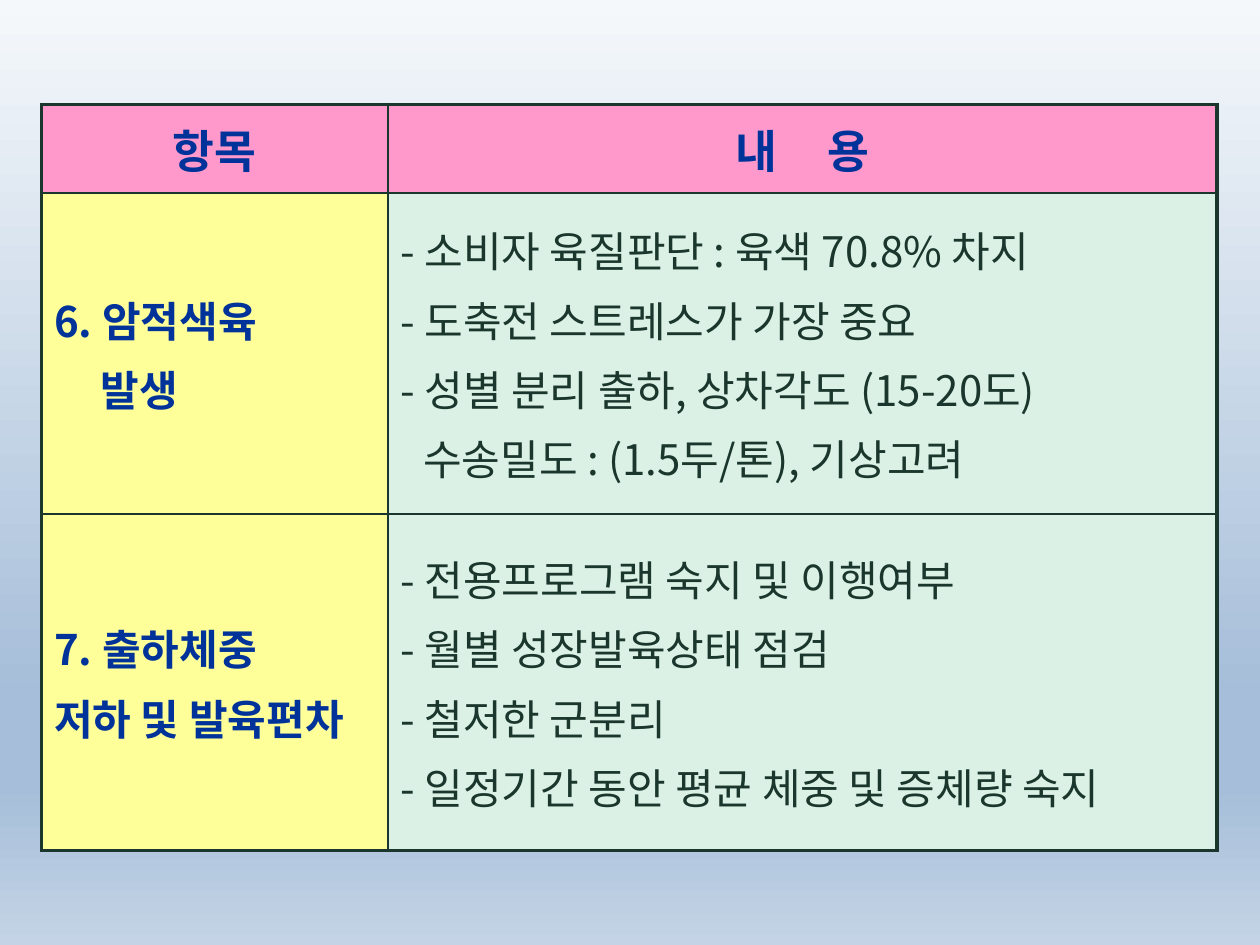
from copy import deepcopy

from pptx import Presentation
from pptx.dml.color import RGBColor
from pptx.enum.text import MSO_ANCHOR as Anchor, PP_ALIGN as Align
from pptx.oxml import parse_xml
from pptx.oxml.ns import nsdecls, qn
from pptx.util import Inches, Pt


def color(value):
    return RGBColor.from_string(value)


class SlideBuilder:
    FONT = "Noto Sans CJK KR"
    NAVY = "003399"
    GREEN = "1B372D"
    THICK = 2.25
    THIN = 1

    def __init__(self, slide):
        self.slide = slide

    def background(self, stops):
        fill = self.slide.background.fill
        fill.gradient()
        fill.gradient_angle = 270
        stop_list = self.slide.element.find(".//" + qn("a:gsLst"))
        for _ in range(len(stops) - len(stop_list)):
            stop_list.append(deepcopy(stop_list[0]))
        for stop, (position, shade) in zip(fill.gradient_stops, stops):
            stop.position = position
            stop.color.rgb = color(shade)

    def table(self, left, top, widths, heights):
        frame = self.slide.shapes.add_table(
            len(heights), len(widths), Inches(left), Inches(top),
            Inches(sum(widths)), Inches(sum(heights)))
        table = frame.table
        table.first_row = table.horz_banding = False
        for column, width in zip(table.columns, widths):
            column.width = Inches(width)
        for row, height in zip(table.rows, heights):
            row.height = Inches(height)
        return table

    def borders(self, cell, weights):
        properties = cell._tc.get_or_add_tcPr()
        for index, (side, weight) in enumerate(zip("LRTB", weights)):
            properties.insert(index, parse_xml(
                f'<a:ln{side} {nsdecls("a")} w="{Pt(weight)}"><a:solidFill>'
                f'<a:srgbClr val="{self.GREEN}"/></a:solidFill></a:ln{side}>'))

    def cell(self, cell, lines, fill, size, ink, bold, align=Align.LEFT):
        cell.fill.solid()
        cell.fill.fore_color.rgb = color(fill)
        cell.vertical_anchor = Anchor.MIDDLE
        cell.text_frame.text = "\n".join(lines)
        for index, paragraph in enumerate(cell.text_frame.paragraphs):
            paragraph.alignment = align
            if index:
                paragraph.space_before = Pt(size * 0.2)
            for run in paragraph.runs:
                self.format(run, size, ink, bold)

    def format(self, run, size, ink, bold):
        font = run.font
        font.name = self.FONT
        font.size = Pt(size)
        font.bold = bold
        font.color.rgb = color(ink)
        run._r.get_or_add_rPr().find(qn("a:latin")).addnext(
            parse_xml(f'<a:ea {nsdecls("a")} typeface="{self.FONT}"/>'))

    def indent(self, paragraph, inches):
        properties = paragraph._p.get_or_add_pPr()
        properties.set("marL", str(Inches(inches)))
        properties.set("indent", "0")

    def spread(self, paragraph, parts, size, ink, gap):
        paragraph.runs[0].text = parts[0]
        for part in parts[1:]:
            for text in (" ", part):
                run = paragraph.add_run()
                run.text = text
                self.format(run, size, ink, True)
                if text == " ":
                    run._r.get_or_add_rPr().set("spc", str(gap * 100))


def main():
    presentation = Presentation()
    presentation.slide_width = Inches(10)
    presentation.slide_height = Inches(7.5)
    builder = SlideBuilder(presentation.slides.add_slide(presentation.slide_layouts[6]))
    builder.background([(0, "F5F8FB"), (0.74, "A6BED9"), (0.83, "A6BED9"), (1, "C4D4E6")])

    headings = ["항목", "내 용"]
    topics = [
        (["6. 암적색육", "발생"],
         ["- 소비자 육질판단 : 육색 70.8% 차지",
          "- 도축전 스트레스가 가장 중요",
          "- 성별 분리 출하, 상차각도 (15-20도)",
          "수송밀도 : (1.5두/톤), 기상고려"]),
        (["7. 출하체중", "저하 및 발육편차"],
         ["- 전용프로그램 숙지 및 이행여부",
          "- 월별 성장발육상태 점검",
          "- 철저한 군분리",
          "- 일정기간 동안 평균 체중 및 증체량 숙지"]),
    ]

    table = builder.table(0.33, 0.83, [2.75, 6.58], [0.7, 2.55, 2.67])
    for column, heading in enumerate(headings):
        builder.cell(table.cell(0, column), [heading], "FF99CC", 26,
                     builder.NAVY, True, Align.CENTER)
    for row, (topic, details) in enumerate(topics, start=1):
        builder.cell(table.cell(row, 0), topic, "FFFF99", 24, builder.NAVY, True)
        builder.cell(table.cell(row, 1), details, "DBF1E5", 24, builder.GREEN, False)

    content_heading = table.cell(0, 1).text_frame.paragraphs[0]
    builder.spread(content_heading, headings[1].split(), 26, builder.NAVY, 23)
    builder.indent(table.cell(1, 0).text_frame.paragraphs[1], 0.37)
    builder.indent(table.cell(1, 1).text_frame.paragraphs[3], 0.18)

    last_row, last_column = len(topics), len(headings) - 1
    for row in range(last_row + 1):
        for column in range(last_column + 1):
            outer = (column == 0, column == last_column, row == 0, row == last_row)
            builder.borders(table.cell(row, column),
                            [builder.THICK if edge else builder.THIN for edge in outer])

    presentation.save("out.pptx")


if __name__ == "__main__":
    main()
